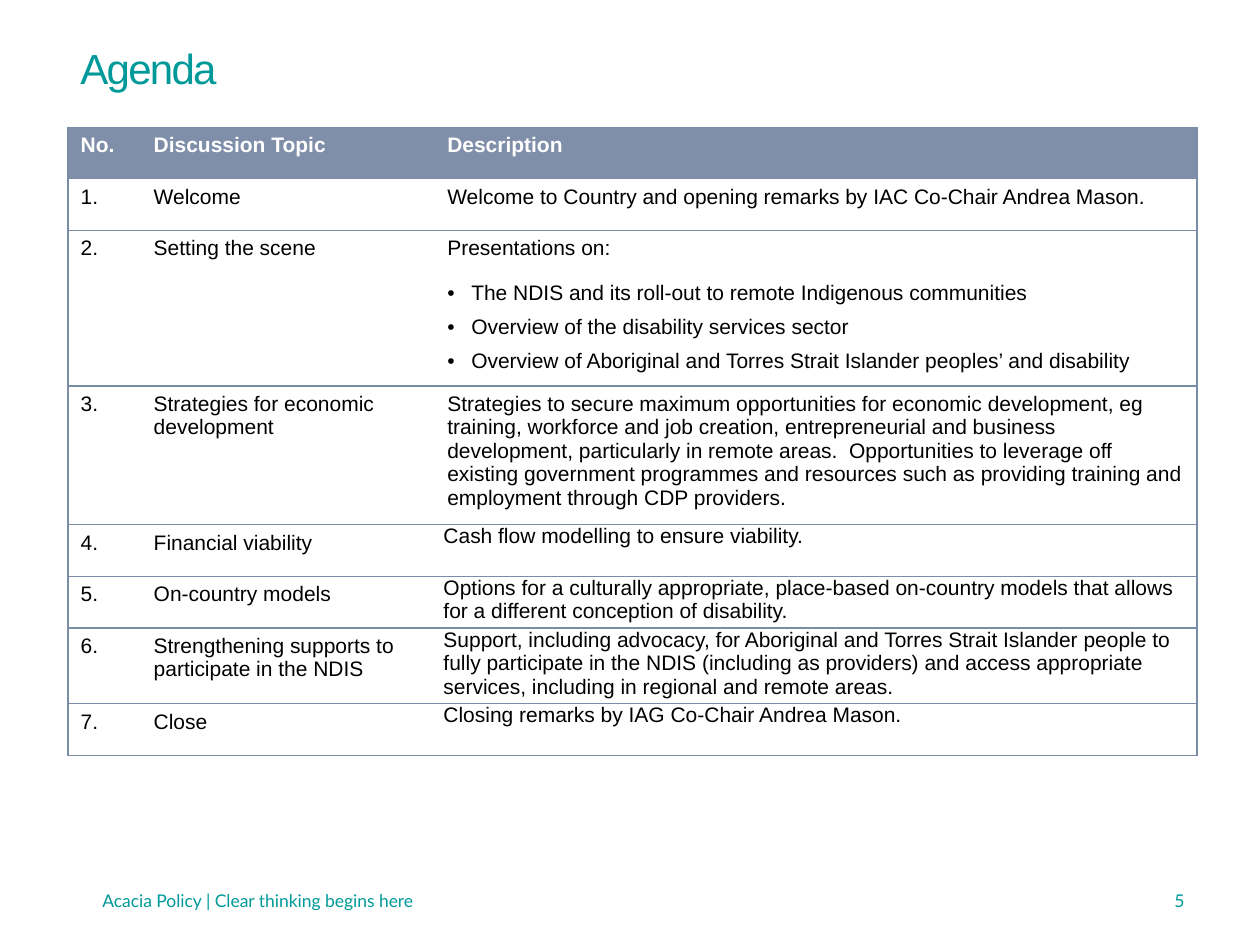
from dataclasses import dataclass

from lxml import etree
from pptx import Presentation
from pptx.dml.color import RGBColor
from pptx.enum.text import MSO_ANCHOR, MSO_AUTO_SIZE, PP_ALIGN
from pptx.oxml.ns import qn
from pptx.util import Inches, Pt

LEFT, CENTER, RIGHT = PP_ALIGN.LEFT, PP_ALIGN.CENTER, PP_ALIGN.RIGHT
TOP, MIDDLE = MSO_ANCHOR.TOP, MSO_ANCHOR.MIDDLE
GROW = MSO_AUTO_SIZE.SHAPE_TO_FIT_TEXT

TEAL, SLATE, RULE = "009999", "7F8FA9", "7B8CA6"
WHITE, BLACK = "FFFFFF", "000000"
MARGIN_LEFT, CONTENT_WIDTH = 0.54, 8.96
COLUMN_WIDTHS = (0.58, 2.33, 6.05)
ROW_HEIGHT = 0.41
BULLET_INDENT = 0.19
HEADINGS = ("No.", "Discussion Topic", "Description")


@dataclass
class AgendaItem:
    topic: str
    description: str
    bullets: tuple[str, ...] = ()
    tight: bool = False


@dataclass
class Label:
    text: str
    box: tuple[float, float, float, float]
    size: float
    font: str
    align: PP_ALIGN = LEFT
    anchor: MSO_ANCHOR = TOP


AGENDA = (
    AgendaItem("Welcome", "Welcome to Country and opening remarks by IAC Co-Chair Andrea Mason."),
    AgendaItem("Setting the scene", "Presentations on:", (
        "The NDIS and its roll-out to remote Indigenous communities",
        "Overview of the disability services sector",
        "Overview of Aboriginal and Torres Strait Islander peoples’ and disability",
    )),
    AgendaItem(
        "Strategies for economic development",
        "Strategies to secure maximum opportunities for economic development, eg training, "
        "workforce and job creation, entrepreneurial and business development, particularly in "
        "remote areas.  Opportunities to leverage off existing government programmes and "
        "resources such as providing training and employment through CDP providers."),
    AgendaItem("Financial viability", "Cash flow modelling to ensure viability.", tight=True),
    AgendaItem(
        "On-country models",
        "Options for a culturally appropriate, place-based on-country models that allows for a "
        "different conception of disability.", tight=True),
    AgendaItem(
        "Strengthening supports to participate in the NDIS",
        "Support, including advocacy, for Aboriginal and Torres Strait Islander people to fully "
        "participate in the NDIS (including as providers) and access appropriate services, "
        "including in regional and remote areas.", tight=True),
    AgendaItem("Close", "Closing remarks by IAG Co-Chair Andrea Mason.", tight=True),
)

TITLE = Label("Agenda", (MARGIN_LEFT, 0.29, CONTENT_WIDTH, 0.5), 24, "Arial")
FOOTERS = (
    Label("5", (7.17, 6.95, 2.33, 0.4), 10, "Lato", RIGHT, MIDDLE),
    Label("Acacia Policy | Clear thinking begins here", (MARGIN_LEFT, 6.95, 3.01, 0.4),
          10, "Lato", CENTER, MIDDLE),
)


def rgb(value: str) -> RGBColor:
    return RGBColor.from_string(value)


def apply(target, values: dict) -> None:
    for name, value in values.items():
        setattr(target, name, value)


def add_run(paragraph, text: str, color: str, size: float, font: str, bold: bool = False):
    run = paragraph.add_run()
    run.text = text
    apply(run.font, {"size": Pt(size), "name": font, "bold": bold})
    run.font.color.rgb = rgb(color)
    return run


def add_label(slide, label: Label):
    box = slide.shapes.add_textbox(*map(Inches, label.box))
    apply(box.text_frame, {"word_wrap": True, "vertical_anchor": label.anchor})
    paragraph = box.text_frame.paragraphs[0]
    paragraph.alignment = label.align
    add_run(paragraph, label.text, TEAL, label.size, label.font)
    return box


def set_borders(cell, sides: dict[str, bool]) -> None:
    properties = cell._tc.get_or_add_tcPr()
    for side, visible in sides.items():
        line = etree.SubElement(properties, qn(f"a:ln{side}"), w=str(Pt(0.75)))
        if visible:
            fill = etree.SubElement(line, qn("a:solidFill"))
            etree.SubElement(fill, qn("a:srgbClr"), val=RULE)
        else:
            etree.SubElement(line, qn("a:noFill"))


def add_bullet(frame, text: str) -> None:
    paragraph = frame.add_paragraph()
    paragraph.space_before = Pt(6)
    properties = paragraph._p.get_or_add_pPr()
    properties.set("marL", str(Inches(BULLET_INDENT)))
    properties.set("indent", str(-Inches(BULLET_INDENT)))
    etree.SubElement(properties, qn("a:buFont"), typeface="Arial")
    etree.SubElement(properties, qn("a:buChar"), char="•")
    add_run(paragraph, text, BLACK, 12, "Arial")


def fill_cell(cell, text: str, column: int, header: bool = False) -> None:
    last = len(COLUMN_WIDTHS) - 1
    set_borders(cell, {"L": column == 0, "R": column == last, "T": True, "B": True})
    cell.fill.solid()
    cell.fill.fore_color.rgb = rgb(SLATE if header else WHITE)
    paragraph = cell.text_frame.paragraphs[0]
    if not header:
        apply(paragraph, {"space_before": Pt(6), "space_after": Pt(6)})
    add_run(paragraph, text, WHITE if header else BLACK, 12, "Arial", header)


def add_agenda(slide) -> None:
    row_count = len(AGENDA) + 1
    table = slide.shapes.add_table(
        row_count, len(COLUMN_WIDTHS), Inches(MARGIN_LEFT), Inches(1.01),
        Inches(CONTENT_WIDTH), Inches(ROW_HEIGHT * row_count)).table
    apply(table, {"first_row": False, "horz_banding": False})
    for column, width in zip(table.columns, COLUMN_WIDTHS):
        column.width = Inches(width)
    for row in table.rows:
        row.height = Inches(ROW_HEIGHT)

    for column, heading in enumerate(HEADINGS):
        fill_cell(table.cell(0, column), heading, column, header=True)
    for number, item in enumerate(AGENDA, 1):
        for column, text in enumerate((f"{number}.", item.topic, item.description)):
            fill_cell(table.cell(number, column), text, column)
        description = table.cell(number, 2)
        for bullet in item.bullets:
            add_bullet(description.text_frame, bullet)
        if item.tight:
            apply(description, {"margin_left": Inches(0.07), "margin_right": Inches(0.07),
                                "margin_top": 0, "margin_bottom": 0})


def main() -> None:
    deck = Presentation()
    apply(deck, {"slide_width": Inches(10), "slide_height": Inches(7.5)})
    slide = deck.slides.add_slide(deck.slide_layouts[6])

    # Title with slightly tightened letters
    title = add_label(slide, TITLE)
    title.fill.solid()
    title.fill.fore_color.rgb = rgb(WHITE)
    title.text_frame.auto_size = GROW
    title.text_frame.paragraphs[0].runs[0].font._element.set("spc", "-100")

    # Page number and tagline
    for footer in FOOTERS:
        add_label(slide, footer)

    # Agenda table
    add_agenda(slide)

    deck.save("out.pptx")


if __name__ == "__main__":
    main()
